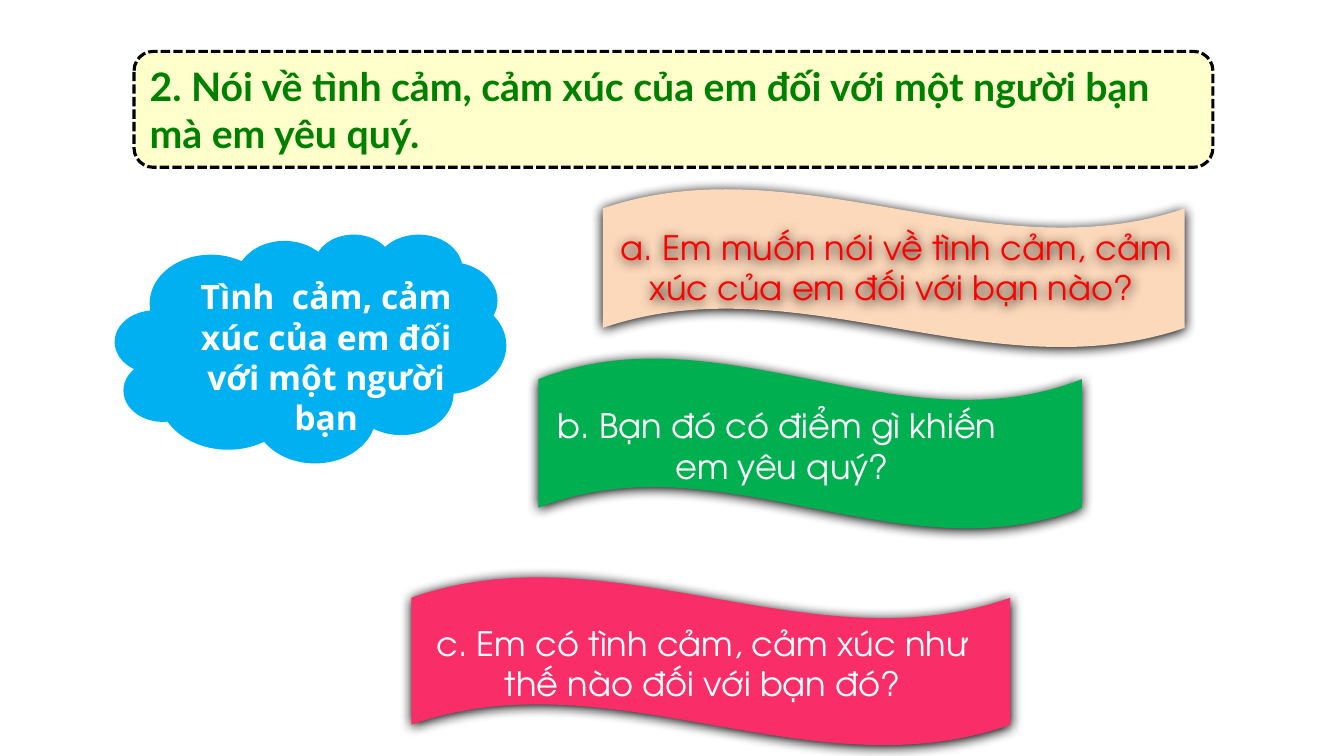
from pptx import Presentation
from pptx.dml.color import RGBColor
from pptx.enum.dml import MSO_LINE
from pptx.enum.shapes import MSO_SHAPE
from pptx.enum.text import MSO_ANCHOR, PP_ALIGN
from pptx.oxml import parse_xml
from pptx.oxml.ns import nsdecls
from pptx.util import Inches, Pt

THEME = {
    "title_fill": "FFFFCC", "title_text": "008000", "outline": "000000",
    "peach": "FDD9BB", "red": "FF0000", "green": "00B050",
    "pink": "F92D67", "blue": "00B0F0", "white": "FFFFFF", "shadow": "000000",
    "title_size": 28, "body_size": 24,
    "title_font": "Lato", "cloud_font": "Open Sans", "question_font": "TeX Gyre Adventor",
}

prs = Presentation()
prs.slide_width, prs.slide_height = Inches(13.33), Inches(7.5)
s = prs.slides.add_slide(prs.slide_layouts[6])


def add_block(kind, box, fill=None, shadow=False):
    sp = s.shapes.add_shape(kind, *[Inches(v) for v in box])
    sp.line.fill.background()
    if fill:
        sp.fill.solid()
        sp.fill.fore_color.rgb = RGBColor.from_string(THEME[fill])
    else:
        sp.fill.background()
    sp.shadow.inherit = False
    if shadow:
        effects = sp.element.spPr.find("{*}effectLst")
        effects.append(parse_xml(
            f'<a:outerShdw {nsdecls("a")} blurRad="{Pt(8.5)}" dist="{Pt(1)}" dir="5400000" '
            f'algn="t" rotWithShape="0"><a:srgbClr val="{THEME["shadow"]}"/></a:outerShdw>'))
    return sp


def write(sp, text, font, size, color, bold=False, align=PP_ALIGN.CENTER, anchor=MSO_ANCHOR.TOP):
    tf = sp.text_frame
    tf.word_wrap = True
    tf.vertical_anchor = anchor
    tf.text = text
    for p in tf.paragraphs:
        p.alignment = align
        for r in p.runs:
            r.font.name = THEME[font]
            r.font.size = Pt(THEME[size])
            r.font.bold = bold
            r.font.color.rgb = RGBColor.from_string(THEME[color])


title = add_block(MSO_SHAPE.ROUNDED_RECTANGLE, (1.33, 0.51, 10.7, 1.15), "title_fill")
title.line.color.rgb = RGBColor.from_string(THEME["outline"])
title.line.width = Pt(2.25)
title.line.dash_style = MSO_LINE.SQUARE_DOT
write(title, "2. Nói về tình cảm, cảm xúc của em đối với một người bạn mà em yêu quý.",
      "title_font", "title_size", "title_text", True, PP_ALIGN.LEFT, MSO_ANCHOR.MIDDLE)

questions = [
    ((5.98, 1.87, 5.77, 1.58), "peach", (5.92, 2.15, 5.94, 1.01), "red", True,
     "a. Em muốn nói về tình cảm, cảm xúc của em đối với bạn nào? "),
    ((5.34, 3.55, 5.39, 1.7), "green", (4.42, 3.97, 6.67, 0.91), "white", False,
     "b. Bạn đó có điểm gì khiến \nem yêu quý?"),
    ((4.08, 5.72, 5.94, 1.68), "pink", (4, 6.08, 5.94, 1.01), "white", False,
     "c. Em có tình cảm, cảm xúc như thế nào đối với bạn đó?"),
]
for wave_box, fill, text_box, color, text_shadow, text in questions:
    add_block(MSO_SHAPE.WAVE, wave_box, fill, shadow=True)
    kind = MSO_SHAPE.RECTANGLE if "\n" in text else MSO_SHAPE.ROUNDED_RECTANGLE
    label = add_block(kind, text_box, shadow=text_shadow)
    write(label, text, "question_font", "body_size", color)

add_block(MSO_SHAPE.CLOUD, (1.14, 2.32, 3.88, 2.27), "blue")
topic = add_block(MSO_SHAPE.ROUNDED_RECTANGLE, (1.58, 2.62, 3.31, 1.45))
write(topic, "Tình  cảm, cảm xúc của em đối với một người bạn",
      "cloud_font", "body_size", "white", True)

prs.save("out.pptx")
